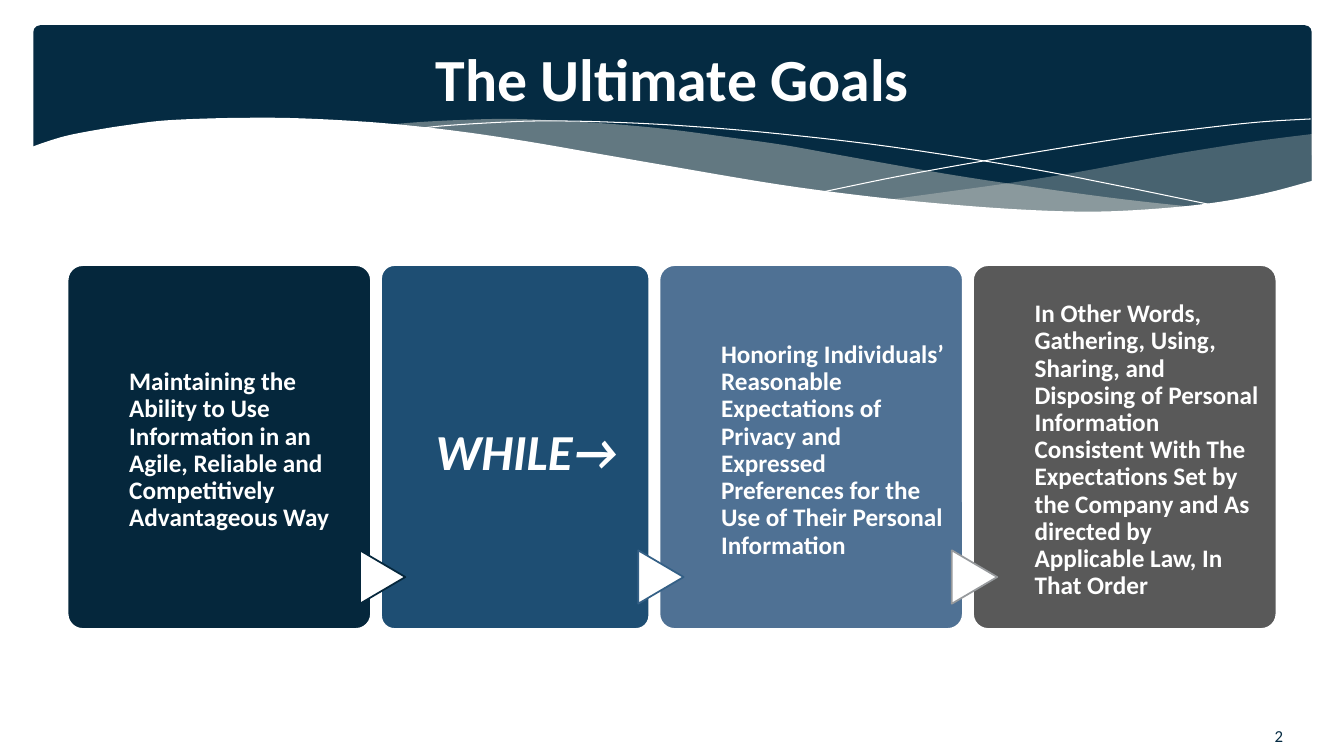
from lxml import etree
from pptx import Presentation
from pptx.dml.color import RGBColor
from pptx.enum.shapes import MSO_SHAPE
from pptx.enum.text import MSO_ANCHOR, PP_ALIGN
from pptx.oxml.ns import qn
from pptx.util import Inches, Pt

ROUND = MSO_SHAPE.ROUNDED_RECTANGLE
ARROW = MSO_SHAPE.FLOWCHART_EXTRACT
MIDDLE = MSO_ANCHOR.MIDDLE
CENTER = PP_ALIGN.CENTER

WHITE = RGBColor(0xFF, 0xFF, 0xFF)
CREAM = RGBColor(0xEE, 0xEC, 0xE1)
NAVY = RGBColor(0x05, 0x2B, 0x42)
INK = RGBColor(0x05, 0x27, 0x3C)
BLUE = RGBColor(0x1E, 0x4E, 0x73)
STEEL = RGBColor(0x4F, 0x71, 0x94)
OCEAN = RGBColor(0x34, 0x60, 0x86)
GRAY = RGBColor(0x59, 0x59, 0x59)
SILVER = RGBColor(0x97, 0x9A, 0x9D)

TOP, HIGH, LEFT, GAP = 2.63, 3.61, 0.67, 0.1
BODY = {"size": Pt(18), "bold": True}
LOUD = {"size": Pt(36), "bold": True, "italic": True}
CARDS = [
    (3.01, INK, None, 0.07, BODY,
     "Maintaining the Ability to Use Information in an Agile, Reliable and "
     "Competitively Advantageous Way"),
    (2.66, BLUE, INK, 0.14, LOUD, "WHILE→"),
    (3.01, STEEL, OCEAN, 0.07, BODY,
     "Honoring Individuals’ Reasonable Expectations of Privacy and Expressed "
     "Preferences for the Use of Their Personal Information"),
    (3.01, GRAY, SILVER, 0.07, BODY,
     "In Other Words, Gathering, Using, Sharing, and Disposing of Personal "
     "Information Consistent With The Expectations Set by the Company and As "
     "directed by Applicable Law, In That Order"),
]

RIGHT_BAND = [
    [(13.01, 1.33), (12.46, 1.4), (11.88, 1.49), (11.47, 1.56), (10.73, 1.7),
     (10.05, 1.81), (9.41, 1.9), (8.82, 1.98)],
    [(8.82, 1.98), (9.4, 2.04), (9.93, 2.08), (10.41, 2.1), (10.85, 2.11),
     (11.26, 2.1), (11.74, 2.06), (12.18, 2), (12.57, 1.92), (13.01, 1.8)],
]
LEFT_BAND = [
    [(11.9, 2.06), (11.16, 1.98), (10.34, 1.87), (9.41, 1.73), (8.39, 1.55),
     (7.78, 1.44), (7.21, 1.36), (6.69, 1.29), (6.19, 1.24), (5.6, 1.2),
     (5.06, 1.18), (4.59, 1.19), (4.18, 1.21), (3.82, 1.24)],
    [(3.82, 1.24), (4.31, 1.29), (4.83, 1.36), (5.39, 1.44), (5.99, 1.55),
     (7.06, 1.73), (8.02, 1.88), (8.87, 1.99), (9.63, 2.07), (10.3, 2.1),
     (10.9, 2.11), (11.43, 2.1), (11.9, 2.06)],
]
FALL = [[(4.12, 1.28), (4.38, 1.25), (4.84, 1.22), (5.35, 1.2), (6, 1.21),
         (6.8, 1.25), (7.75, 1.33), (8.86, 1.46), (10.14, 1.66), (11.08, 1.84),
         (12.1, 2.05)]]
RISE = [[(8.18, 1.9), (8.96, 1.74), (9.97, 1.56), (11.15, 1.37), (11.94, 1.27),
         (12.5, 1.21), (13, 1.18)]]
FRONT = [
    [(13.03, 1.79), (12.54, 1.92), (11.98, 2.02), (11.34, 2.08), (10.78, 2.1),
     (10.15, 2.08), (9.44, 2.03), (8.63, 1.95), (7.72, 1.83), (6.71, 1.66),
     (5.96, 1.53), (5.21, 1.4), (4.53, 1.3), (3.9, 1.23), (3.33, 1.19),
     (2.82, 1.17), (2.35, 1.17), (1.94, 1.18), (1.58, 1.2), (1.27, 1.24),
     (1.01, 1.28), (0.69, 1.34), (0.48, 1.4), (0.31, 1.46)],
    [(0.31, 2.62), (13.03, 2.62)],
]


def smooth(knots, steps=5):
    """Return points on a Catmull-Rom curve through the knots."""
    ends = [knots[0], *knots, knots[-1]]
    points = [knots[0]]
    for a, b, c, d in zip(ends, ends[1:], ends[2:], ends[3:]):
        for step in range(1, steps + 1):
            t = step / steps
            points.append(tuple(
                (2 * q + (r - p) * t + (2 * p - 5 * q + 4 * r - s) * t ** 2
                 + (3 * q - p - 3 * r + s) * t ** 3) / 2
                for p, q, r, s in zip(a, b, c, d)))
    return points


def paint(shape, fill=None, line=None, width=1.25):
    """Set fill and line, and drop the shadow."""
    shape.shadow.inherit = False
    for part, color in ((shape.fill, fill), (shape.line.fill, line)):
        if color is None:
            part.background()
        else:
            part.solid()
            part.fore_color.rgb = color
    if line is not None:
        shape.line.width = Pt(width)


def add_wave(slide, edges, fill=None, line=None, alpha=100):
    """Draw a curved outline from one or more smooth edges."""
    points = [(Inches(x), Inches(y)) for edge in edges for x, y in smooth(edge)]
    form = slide.shapes.build_freeform(*points[0])
    form.add_line_segments(points[1:], close=fill is not None)
    wave = form.convert_to_shape()
    paint(wave, fill, line, 0)
    if alpha < 100:
        color = wave.fill._xPr.find(qn("a:solidFill"))[0]
        etree.SubElement(color, qn("a:alpha")).set("val", str(alpha * 1000))


def add_block(slide, kind, box, fill, line=None, turn=0, round_by=None):
    """Add a preset shape."""
    block = slide.shapes.add_shape(kind, *map(Inches, box))
    paint(block, fill, line)
    block.rotation = turn
    if round_by is not None:
        block.adjustments[0] = round_by


def add_text(slide, text, box, style, color=WHITE, frame=None, para=None):
    """Add a wrapped text box, centred from top to bottom."""
    area = slide.shapes.add_textbox(*map(Inches, box)).text_frame
    line = area.paragraphs[0]
    line.text = text
    font = line.runs[0].font
    font.color.rgb = color
    formats = (
        (area, {"word_wrap": True, "vertical_anchor": MIDDLE, **(frame or {})}),
        (line, para or {}),
        (font, {"name": "Calibri", **style}),
    )
    for target, values in formats:
        for name, value in values.items():
            setattr(target, name, value)


def add_cards(slide):
    """Lay the cards out in a row, with an arrow over each gap."""
    left = LEFT
    for wide, fill, edge, inset, style, text in CARDS:
        add_block(slide, ROUND, (left, TOP, wide, HIGH), fill, WHITE,
                  round_by=0.05)
        if edge is not None:
            add_block(slide, ARROW, (left - 0.25, 5.5, 0.53, 0.45), WHITE,
                      edge, turn=90)
        frame = {"margin_left": 0, "margin_right": 0, "margin_bottom": 0,
                 "margin_top": Inches(inset)}
        add_text(slide, text, (left + wide / 5 + 0.01, TOP, wide * 0.745, HIGH),
                 style, frame=frame, para={"line_spacing": 0.9})
        left += wide + GAP


def main():
    """Build the slide and save it."""
    deck = Presentation()
    deck.slide_width, deck.slide_height = Inches(13.33), Inches(7.5)
    slide = deck.slides.add_slide(deck.slide_layouts[6])
    add_block(slide, ROUND, (0.33, 0.25, 12.68, 2.31), NAVY, round_by=0.03)
    add_wave(slide, RIGHT_BAND, fill=CREAM, alpha=29)
    add_wave(slide, LEFT_BAND, fill=CREAM, alpha=40)
    for edges in (FALL, RISE):
        add_wave(slide, edges, line=WHITE)
    add_wave(slide, FRONT, fill=WHITE)
    add_cards(slide)
    middle = {"alignment": CENTER}
    add_text(slide, "The Ultimate Goals", (0.67, 0.25, 12, 1.04),
             {"size": Pt(42.7), "bold": True}, para=middle)
    add_text(slide, "2", (12.26, 7.1, 0.85, 0.4), {"size": Pt(12)}, NAVY,
             para=middle)
    deck.save("out.pptx")


if __name__ == "__main__":
    main()
